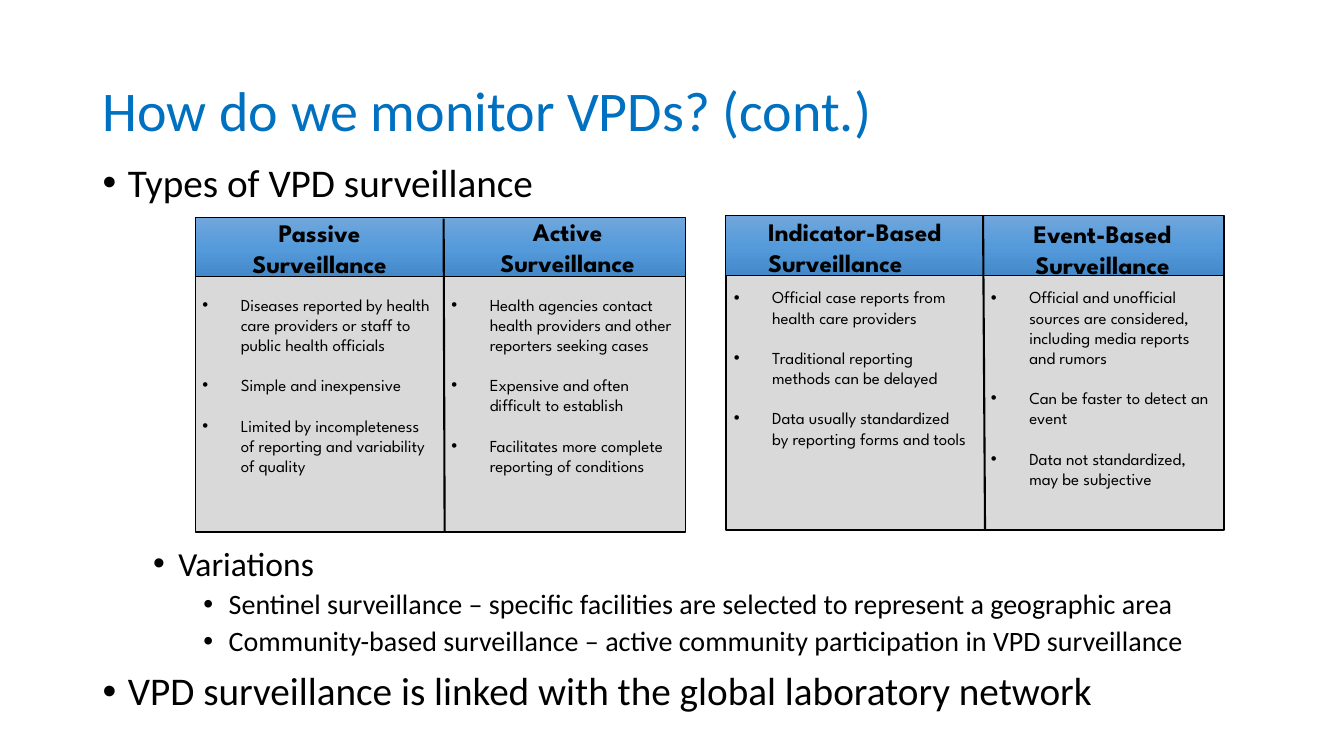
from copy import deepcopy

from lxml import etree
from pptx import Presentation
from pptx.dml.color import RGBColor
from pptx.enum.shapes import MSO_CONNECTOR, MSO_SHAPE
from pptx.enum.text import MSO_ANCHOR, MSO_AUTO_SIZE, PP_ALIGN
from pptx.oxml.ns import qn
from pptx.util import Inches, Pt

RECTANGLE = MSO_SHAPE.RECTANGLE
STRAIGHT = MSO_CONNECTOR.STRAIGHT
LEFT, CENTER = PP_ALIGN.LEFT, PP_ALIGN.CENTER
TOP, MIDDLE = MSO_ANCHOR.TOP, MSO_ANCHOR.MIDDLE
GROW = MSO_AUTO_SIZE.SHAPE_TO_FIT_TEXT

COLORS = {"title": "0070C0", "text": "000000", "line": "000000", "panel": "D9D9D9"}
HEADER_GRADIENT = [(0, "71A6DB"), (0.5, "559BDB"), (1, "448ACA")]
BODY_FONT, PANEL_FONT = "Calibri", "League Spartan"

TITLE = "How do we monitor VPDs? (cont.)"
# Each outline entry: level, text
OPENING = [(0, "Types of VPD surveillance")]
CLOSING = [
    (1, "Variations"),
    (2, "Sentinel surveillance – specific facilities are selected to represent a geographic area"),
    (2, "Community-based surveillance – active community participation in VPD surveillance"),
    (0, "VPD surveillance is linked with the global laboratory network"),
]
# Each level: left margin in inches, font size, space before
LEVELS = [(0.25, 28, 10), (0.75, 24, 5), (1.25, 20, 5)]

# Boxes are left, top, width, height in inches
PANELS = [
    {
        "body": (1.94, 2.22, 4.86, 3.06),
        "header": (1.94, 2.16, 4.86, 0.58),
        "divider": (4.4, 2.17, 4.41, 5.28),
        "columns": [
            ("Passive Surveillance", CENTER, (2.05, 2.11, 2.24, 0.26), (1.91, 2.87, 2.51, 2.49), [
                "Diseases reported by health care providers or staff to public health officials",
                "Simple and inexpensive",
                "Limited by incompleteness of reporting and variability of quality",
            ]),
            ("Active Surveillance", CENTER, (4.51, 2.1, 2.24, 0.26), (4.38, 2.87, 2.5, 2.93), [
                "Health agencies contact health providers and other reporters seeking cases",
                "Expensive and often difficult to establish",
                "Facilitates more complete reporting of conditions",
            ]),
        ],
    },
    {
        "body": (7.2, 2.14, 4.94, 3.12),
        "header": (7.2, 2.14, 4.94, 0.59),
        "divider": (9.75, 2.14, 9.77, 5.26),
        "columns": [
            ("Indicator-Based Surveillance", LEFT, (7.52, 2.1, 2.27, 0.27), (7.18, 2.8, 2.52, 1), [
                "Official case reports from\nhealth care providers",
                "Traditional reporting methods can be delayed",
                "Data usually standardized by reporting forms and tools",
            ]),
            ("Event-Based Surveillance", CENTER, (9.8, 2.12, 2.27, 0.27), (9.73, 2.8, 2.41, 2.34), [
                "Official and unofficial sources are considered, including media reports and rumors",
                "Can be faster to detect an event",
                "Data not standardized, may be subjective",
            ]),
        ],
    },
]


def color(value):
    return RGBColor.from_string(value)


def set_bullet(paragraph, margin, hanging):
    properties = paragraph._p.get_or_add_pPr()
    properties.set("marL", str(Inches(margin)))
    properties.set("indent", str(-Inches(hanging)))
    etree.SubElement(properties, qn("a:buFont")).set("typeface", "Arial")
    etree.SubElement(properties, qn("a:buChar")).set("char", "•")


def add_text(slide, box, items, anchor=TOP, grow=False):
    """Add a text box; each item is (text, font format, paragraph format, bullet)."""
    shape = slide.shapes.add_textbox(*map(Inches, box))
    frame = shape.text_frame
    frame.word_wrap = True
    frame.vertical_anchor = anchor
    if grow:
        frame.auto_size = GROW
    for index, (text, font_format, paragraph_format, bullet) in enumerate(items):
        paragraph = frame.add_paragraph() if index else frame.paragraphs[0]
        paragraph.text = text
        for name, value in paragraph_format.items():
            if index or name != "space_before":
                setattr(paragraph, name, value)
        if bullet:
            set_bullet(paragraph, *bullet)
        for run in paragraph.runs:
            for name, value in font_format.items():
                if name == "color":
                    run.font.color.rgb = color(value)
                else:
                    setattr(run.font, name, value)


def add_outline(slide, box, entries):
    items = []
    for level, text in entries:
        margin, size, before = LEVELS[level]
        font_format = {"name": BODY_FONT, "size": Pt(size), "color": COLORS["text"]}
        paragraph_format = {"level": level, "line_spacing": 0.9, "space_before": Pt(before)}
        items.append((text, font_format, paragraph_format, (margin, 0.25)))
    add_text(slide, box, items)


def add_rectangle(slide, box, line_width):
    shape = slide.shapes.add_shape(RECTANGLE, *map(Inches, box))
    shape.shadow.inherit = False
    shape.line.color.rgb = color(COLORS["line"])
    shape.line.width = Pt(line_width)
    return shape


def fill_header(shape):
    """Give the shape a three-stop gradient running from top to bottom."""
    shape.fill.gradient()
    shape.fill.gradient_angle = 270
    stop_list = shape._element.spPr.find(".//" + qn("a:gsLst"))
    stop_list.append(deepcopy(stop_list[-1]))
    for stop, (position, value) in zip(shape.fill.gradient_stops, HEADER_GRADIENT):
        stop.position = position
        stop.color.rgb = color(value)


def add_panel(slide, panel):
    body = add_rectangle(slide, panel["body"], 1)
    body.fill.solid()
    body.fill.fore_color.rgb = color(COLORS["panel"])
    fill_header(add_rectangle(slide, panel["header"], 0.75))

    heading_font = {"name": PANEL_FONT, "size": Pt(18), "bold": True, "color": COLORS["text"]}
    list_font = {"name": PANEL_FONT, "size": Pt(12), "color": COLORS["text"]}
    for heading, alignment, heading_box, list_box, points in panel["columns"]:
        add_text(slide, heading_box, [(heading, heading_font, {"alignment": alignment}, None)], grow=True)
        items = [(point, list_font, {"space_before": Pt(14.4)}, (0.38, 0.38)) for point in points]
        add_text(slide, list_box, items, grow=True)

    divider = slide.shapes.add_connector(STRAIGHT, *map(Inches, panel["divider"]))
    divider.line.color.rgb = color(COLORS["line"])
    divider.line.width = Pt(1.5)
    etree.SubElement(divider._element.spPr, qn("a:effectLst"))


def main():
    presentation = Presentation()
    presentation.slide_width = Inches(13.33)
    presentation.slide_height = Inches(7.5)
    slide = presentation.slides.add_slide(presentation.slide_layouts[6])

    title_font = {"name": BODY_FONT, "size": Pt(40), "color": COLORS["title"]}
    add_text(slide, (0.92, 0.4, 11.5, 1.45), [(TITLE, title_font, {"line_spacing": 0.9}, None)], MIDDLE)
    add_outline(slide, (0.92, 1.57, 11.5, 0.5), OPENING)
    for panel in PANELS:
        add_panel(slide, panel)
    add_outline(slide, (0.92, 5.38, 11.5, 1.98), CLOSING)
    presentation.save("out.pptx")


if __name__ == "__main__":
    main()
